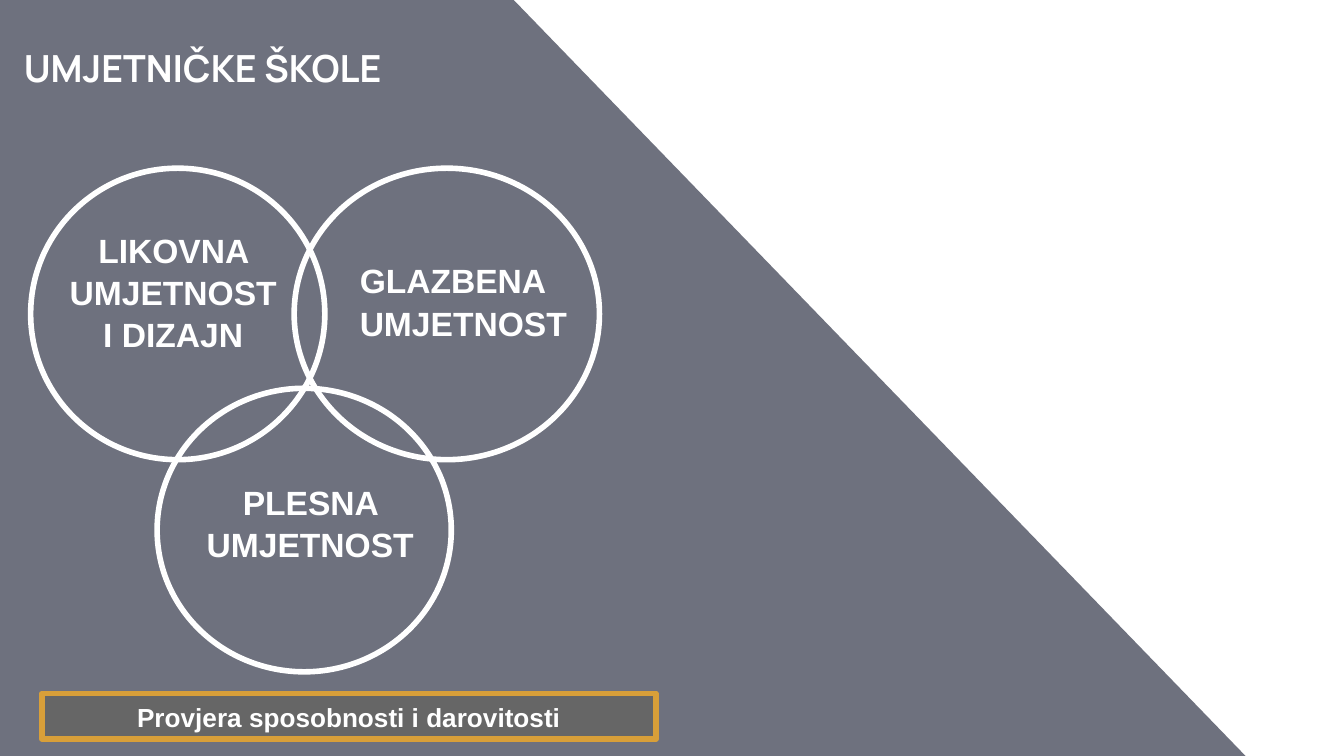
from lxml.etree import SubElement as Sub
from pptx import Presentation as Deck
from pptx.dml.color import RGBColor as Rgb
from pptx.enum.shapes import MSO_SHAPE as Kind
from pptx.enum.text import MSO_ANCHOR as Anchor, PP_ALIGN as Align
from pptx.oxml.ns import qn
from pptx.util import Cm, Pt

WHITE = "FFFFFF"


def paint(target, tone):
    target.solid()
    target.fore_color.rgb = Rgb.from_string(tone)


def apply(target, values):
    for name, value in values.items():
        setattr(target, name, value)


class Page:
    font = "Arial"
    stroke = 3
    pad = {"margin_left": Cm(0.25), "margin_right": Cm(0.25),
           "margin_top": Cm(0.13), "margin_bottom": Cm(0.13)}

    def __init__(self, slide):
        self.slide = slide

    def panel(self, points, tone, alpha):
        first, *rest = [(Cm(x), Cm(y)) for x, y in points]
        form = self.slide.shapes.build_freeform(*first)
        form.add_line_segments(rest, close=True)
        shape = form.convert_to_shape()
        shape.shadow.inherit = False
        paint(shape.fill, tone)
        shape.line.fill.background()
        for node in shape.element.spPr.iter(qn("a:srgbClr")):
            Sub(node, qn("a:alpha"), val=str(alpha * 1000))

    def figure(self, kind, area, edge, tone=None):
        shape = self.slide.shapes.add_shape(kind, *map(Cm, area))
        shape.shadow.inherit = False
        if tone:
            paint(shape.fill, tone)
        else:
            shape.fill.background()
        paint(shape.line.fill, edge)
        shape.line.width = Pt(self.stroke)
        return shape

    def letter(self, shape, text, size, align, font=None, space=1.05, **frame):
        body = shape.text_frame
        apply(body, {"word_wrap": True, **self.pad, **frame})
        line = body.paragraphs[0]
        apply(line, {"alignment": align, "line_spacing": space})
        run = line.add_run()
        run.text = text
        apply(run.font, {"name": font or self.font, "size": Pt(size), "bold": True})
        paint(run.font.fill, WHITE)

    def label(self, area, *args, **more):
        self.letter(self.slide.shapes.add_textbox(*map(Cm, area)), *args, **more)


def main():
    deck = Deck()
    deck.slide_width, deck.slide_height = Cm(25.4), Cm(14.29)
    page = Page(deck.slides.add_slide(deck.slide_layouts[6]))

    page.panel([(9.68, -0.03), (0, 0), (0, 14.3), (23.55, 14.3)], "212539", 65)
    page.label((0.2, 0.2, 7.54, 1.75), "UMJETNIČKE ŠKOLE", 20, Align.LEFT,
               font="Manrope", space=1.0, vertical_anchor=Anchor.BOTTOM,
               margin_top=Cm(0.25), margin_bottom=Cm(0.25))

    rings = [(0.58, 3.18, 5.56, 5.51), (5.56, 3.18, 5.77, 5.51),
             (2.97, 7.34, 5.56, 5.36)]
    for area in rings:
        page.figure(Kind.OVAL, area, WHITE)

    bar = page.figure(Kind.RECTANGLE, (0.79, 13.11, 11.61, 0.86), "D89F39", "666666")
    page.letter(bar, "Provjera sposobnosti i darovitosti", 14, Align.CENTER,
                vertical_anchor=Anchor.MIDDLE)

    arts = [("LIKOVNA UMJETNOST I DIZAJN", 0.99, 4.17, 2.57, Align.CENTER),
            ("GLAZBENA UMJETNOST", 6.55, 4.75, 1.8, Align.LEFT),
            ("PLESNA UMJETNOST", 3.58, 8.94, 1.8, Align.CENTER)]
    for text, left, top, high, align in arts:
        page.label((left, top, 4.57, high), text, 18, align)

    deck.save("out.pptx")


if __name__ == "__main__":
    main()
